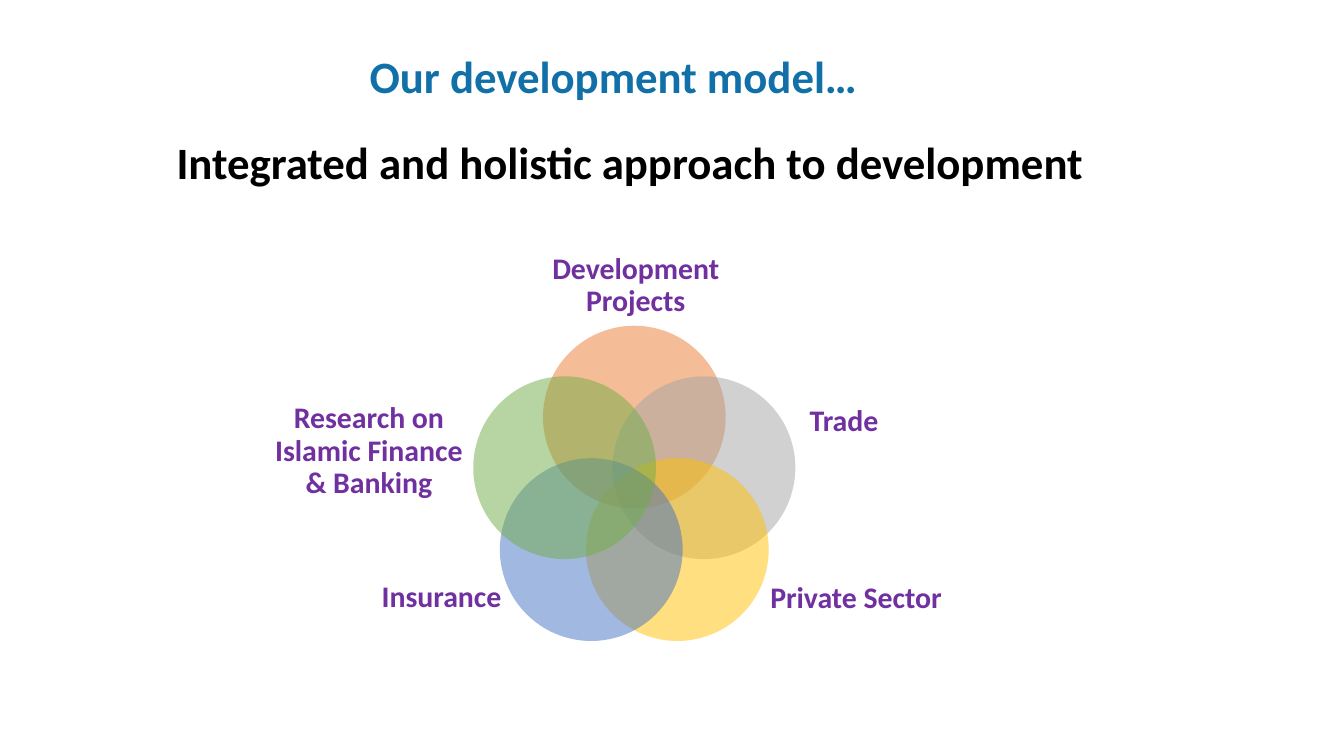
from math import cos, radians, sin

from lxml import etree
from pptx import Presentation
from pptx.dml.color import RGBColor
from pptx.enum.shapes import MSO_SHAPE
from pptx.enum.text import MSO_ANCHOR, PP_ALIGN
from pptx.oxml.ns import qn
from pptx.util import Inches, Pt

OVAL = MSO_SHAPE.OVAL
TOP, MIDDLE = MSO_ANCHOR.TOP, MSO_ANCHOR.MIDDLE
CENTER = PP_ALIGN.CENTER

COLS, ROWS = 1000, 562.5
CELL = Inches(10) // COLS
COLORS = {
    "title": "1070A7", "subtitle": "000000", "label": "7030A0",
    "orange": "ED7D31", "gray": "A5A5A5", "gold": "FFC000",
    "blue": "4472C4", "green": "70AD47",
}
DIAMETER, ORBIT = 136, 54.5
HUB = (268, 197.5)
PETALS = [
    ("Development Projects", "orange", (190, 0, 158, 91)),
    ("Trade", "gray", (353, 97, 142, 99)),
    ("Private Sector", "gold", (362, 229, 142, 99)),
    ("Insurance", "blue", (53.5, 228, 142, 99)),
    ("Research on Islamic Finance & Banking", "green", (-0.5, 119, 142, 99)),
]
LABEL_FRAME = {"margin_left": 0, "margin_right": 0, "margin_top": 0,
               "margin_bottom": 0, "vertical_anchor": MIDDLE}
LABEL_PARAGRAPH = {"line_spacing": 0.9, "space_after": Pt(5.6)}


def grid(*cells):
    """Convert grid cells to lengths."""
    return [round(n * CELL) for n in cells]


def apply(target, values):
    """Set each named format value on the target."""
    for name, value in values.items():
        setattr(target, name, value)


def add_text(shapes, box, text, color, size, frame, paragraph):
    """Add a centred bold text box."""
    tf = shapes.add_textbox(*grid(*box)).text_frame
    apply(tf, {"word_wrap": True, **frame})
    p = tf.paragraphs[0]
    apply(p, {"alignment": CENTER, **paragraph})
    r = p.add_run()
    r.text = text
    apply(r.font, {"name": "Calibri", "size": Pt(size), "bold": True})
    r.font.color.rgb = RGBColor.from_string(COLORS[color])


def add_circle(shapes, box, color):
    """Add a half-transparent circle."""
    s = shapes.add_shape(OVAL, *grid(*box))
    s.shadow.inherit = False
    s.fill.solid()
    s.fill.fore_color.rgb = RGBColor.from_string(COLORS[color])
    s.line.fill.background()
    tint = s.fill._xPr.find(".//" + qn("a:srgbClr"))
    etree.SubElement(tint, qn("a:alpha")).set("val", "50000")


def add_headings(slide, box):
    """Place the title and the subtitle in the box."""
    left, top, width, height = box
    add_text(slide.shapes, (left, top, width, 36), "Our development model…",
             "title", 24, {"vertical_anchor": MIDDLE}, {"line_spacing": Pt(14.2)})
    add_text(slide.shapes, (left + 75, top + height - 50, 744, 50),
             "Integrated and holistic approach to development ",
             "subtitle", 24, {"vertical_anchor": TOP}, {})


def add_venn(slide, box):
    """Place a ring of overlapping labelled circles in the box."""
    left, top = box[:2]
    shapes = slide.shapes.add_group_shape().shapes
    for i, (text, color, (x, y, width, height)) in enumerate(PETALS):
        angle = radians(i * 360 / len(PETALS))
        cx = left + HUB[0] + ORBIT * sin(angle)
        cy = top + HUB[1] - ORBIT * cos(angle)
        add_circle(shapes, (cx - DIAMETER / 2, cy - DIAMETER / 2,
                            DIAMETER, DIAMETER), color)
        add_text(shapes, (left + x, top + y, width, height), text,
                 "label", 16, LABEL_FRAME, LABEL_PARAGRAPH)


def main():
    """Build and save the slide."""
    prs = Presentation()
    prs.slide_width, prs.slide_height = grid(COLS, ROWS)
    slide = prs.slides.add_slide(prs.slide_layouts[6])
    add_headings(slide, (25.4, 48.4, 862, 97))
    add_venn(slide, (204, 167.4, 504, 328))
    prs.save("out.pptx")


if __name__ == "__main__":
    main()
